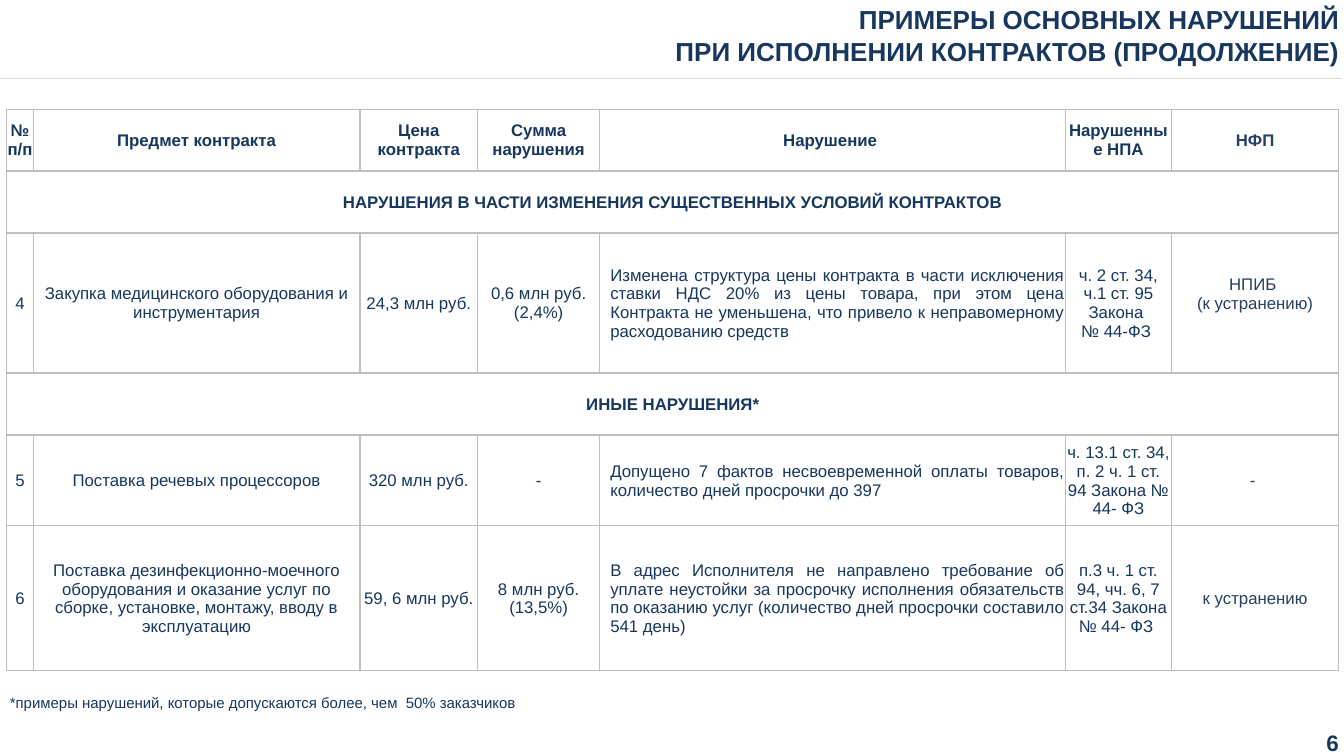
from pptx import Presentation
from pptx.dml.color import RGBColor
from pptx.enum.text import MSO_ANCHOR as ANC, PP_ALIGN as AL
from pptx.oxml import parse_xml
from pptx.oxml.ns import nsdecls
from pptx.util import Cm, Pt

COLORS = {"navy": "17375E", "blue": "254061", "border": "BFBFBF", "rule": "D9D9D9"}
COLS = [0.67, 8.23, 2.97, 3.07, 11.74, 2.67, 4.22]
ROWS = [1.56, 1.56, 3.53, 1.56, 2.29, 3.65]
VIOLATION, OUTCOME = 4, 6
DATA = [
    ["№ п/п", "Предмет контракта", "Цена контракта", "Сумма нарушения",
     "Нарушение ", "Нарушенные НПА", "НФП"],
    ["НАРУШЕНИЯ В ЧАСТИ ИЗМЕНЕНИЯ СУЩЕСТВЕННЫХ УСЛОВИЙ КОНТРАКТОВ"],
    ["4", "Закупка медицинского оборудования и инструментария",
     "24,3 млн руб.", "0,6 млн руб.\n(2,4%)",
     "Изменена структура цены контракта в части исключения ставки НДС 20% "
     "из цены товара, при этом цена Контракта не уменьшена, что привело "
     "к неправомерному расходованию средств",
     "ч. 2 ст. 34, ч.1 ст. 95 Закона \n№ 44-ФЗ ", "НПИБ \n(к устранению)"],
    ["ИНЫЕ НАРУШЕНИЯ*"],
    ["5", "Поставка речевых процессоров", "320 млн руб.", "-",
     "Допущено 7 фактов несвоевременной оплаты товаров, "
     "количество дней просрочки до 397",
     "ч. 13.1 ст. 34, п. 2 ч. 1 ст. 94 Закона № 44- ФЗ", "- "],
    ["6", "Поставка дезинфекционно-моечного оборудования и оказание услуг "
     "по сборке, установке, монтажу, вводу в эксплуатацию",
     "59, 6 млн руб.", "8 млн руб.\n(13,5%)",
     "В адрес Исполнителя не направлено требование об уплате неустойки "
     "за просрочку исполнения обязательств по оказанию услуг "
     "(количество дней просрочки составило 541 день)",
     "п.3 ч. 1 ст. 94, чч. 6, 7 ст.34 Закона № 44- ФЗ ", "к устранению"],
]


class Deck:
    def __init__(self, font="Arial"):
        self.font = font
        self.prs = Presentation()
        self.prs.slide_width, self.prs.slide_height = Cm(33.87), Cm(19.05)
        self.s = self.prs.slides.add_slide(self.prs.slide_layouts[5])

    def run(self, p, text, size, color="navy", bold=False):
        r = p.add_run()
        r.text = text
        r.font.name, r.font.size, r.font.bold = self.font, Pt(size), bold
        r.font.color.rgb = RGBColor.from_string(COLORS[color])

    def frame(self, tf, margin):
        tf.word_wrap = True
        tf.margin_left = tf.margin_right = Cm(margin)
        tf.margin_top = tf.margin_bottom = Cm(margin / 2)

    def title(self, lines, x, y, w, h, size, pitch):
        sp = self.s.shapes.title
        sp.left, sp.top, sp.width, sp.height = Cm(x), Cm(y), Cm(w), Cm(h)
        tf = sp.text_frame
        self.frame(tf, 0)
        tf.vertical_anchor = ANC.TOP
        p = tf.paragraphs[0]
        p.alignment, p.line_spacing = AL.RIGHT, Pt(pitch)
        for i, line in enumerate(lines):
            if i:
                p.add_line_break()
            self.run(p, line, size, bold=True)

    def text(self, text, x, y, w, h, size, align=AL.LEFT, bold=False, margin=0):
        tf = self.s.shapes.add_textbox(Cm(x), Cm(y), Cm(w), Cm(h)).text_frame
        self.frame(tf, margin)
        p = tf.paragraphs[0]
        p.alignment = align
        self.run(p, text, size, bold=bold)

    def rule(self, top, y, w):
        fb = self.s.shapes.build_freeform(0, Cm(top))
        fb.move_to(0, Cm(y))
        fb.add_line_segments([(Cm(w), Cm(y))], close=False)
        sp = fb.convert_to_shape()
        sp.shadow.inherit = False
        sp.fill.background()
        sp.line.width = Pt(1)
        sp.line.color.rgb = RGBColor.from_string(COLORS["rule"])

    def borders(self, cell):
        tcPr = cell._tc.get_or_add_tcPr()
        for i, side in enumerate("LRTB"):
            tcPr.insert(i, parse_xml(
                f'<a:ln{side} {nsdecls("a")} w="12700"><a:solidFill>'
                f'<a:srgbClr val="{COLORS["border"]}"/></a:solidFill></a:ln{side}>'))

    def cell(self, cell, text, column, bold):
        cell.vertical_anchor = ANC.MIDDLE
        cell.margin_left = cell.margin_right = cell.margin_top = Cm(0.02)
        cell.margin_bottom = 0
        justified = column == VIOLATION and not bold
        for i, line in enumerate(text.split("\n")):
            tf = cell.text_frame
            p = tf.add_paragraph() if i else tf.paragraphs[0]
            p.alignment = AL.JUSTIFY if justified else AL.CENTER
            if justified:
                p._p.get_or_add_pPr().set("marL", str(Cm(0.25)))
            self.run(p, line, 12, "blue" if column == OUTCOME else "navy", bold)

    def table(self, data, x, y):
        t = self.s.shapes.add_table(len(ROWS), len(COLS), Cm(x), Cm(y),
                                    Cm(sum(COLS)), Cm(sum(ROWS))).table
        t.first_row = t.horz_banding = False
        for col, w in zip(t.columns, COLS):
            col.width = Cm(w)
        for row, h in zip(t.rows, ROWS):
            row.height = Cm(h)
        for cell in t.iter_cells():
            cell.fill.background()
            self.borders(cell)
        for i, texts in enumerate(data):
            section = len(texts) == 1
            if section:
                t.cell(i, 0).merge(t.cell(i, len(COLS) - 1))
            for j, text in enumerate(texts):
                self.cell(t.cell(i, j), text, j, bold=section or i == 0)
        return t


def main():
    d = Deck()
    d.rule(1.19, 1.98, 33.83)
    d.title(["ПРИМЕРЫ ОСНОВНЫХ НАРУШЕНИЙ", "ПРИ ИСПОЛНЕНИИ КОНТРАКТОВ (ПРОДОЛЖЕНИЕ)"],
            12.92, 0.07, 20.83, 1.6, size=18.6, pitch=22.8)
    t = d.table(DATA, 0.17, 2.75)
    t.cell(2, OUTCOME).margin_bottom = Cm(0.48)
    d.text("6", 27.64, 18.38, 6.1, 0.69, 16, AL.RIGHT, bold=True)
    d.text("*примеры нарушений, которые допускаются более, чем  50% заказчиков",
           0, 17.35, 33.17, 0.71, 10.7, margin=0.25)
    d.prs.save("out.pptx")


if __name__ == "__main__":
    main()
